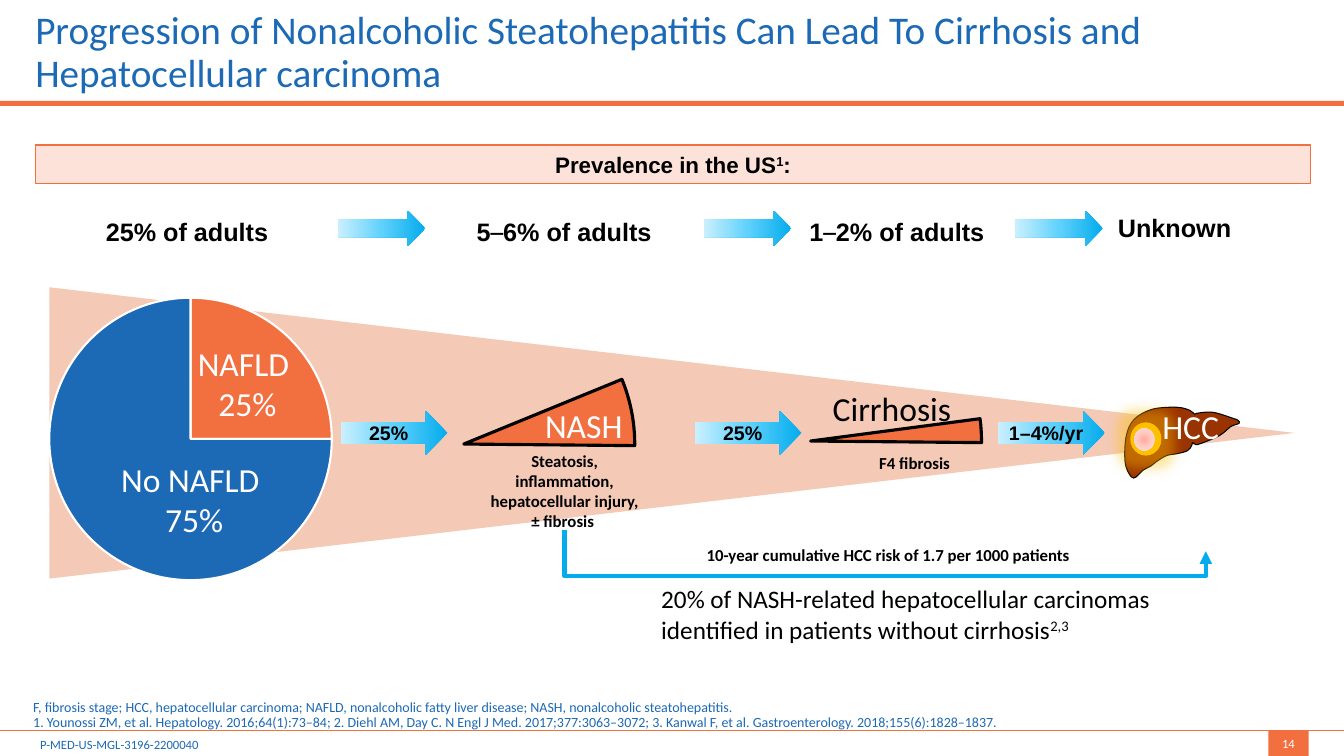
import pptx
import pptx.chart.data
import pptx.dml.color
import pptx.enum.chart
import pptx.enum.shapes
import pptx.enum.text
import pptx.oxml
import pptx.oxml.ns
import pptx.util

RGB = pptx.dml.color.RGBColor
SHAPE = pptx.enum.shapes.MSO_SHAPE
CONNECTOR = pptx.enum.shapes.MSO_CONNECTOR
ALIGN = pptx.enum.text.PP_ALIGN
ANCHOR = pptx.enum.text.MSO_ANCHOR

ORANGE = RGB(0xF2, 0x6F, 0x3F)
BLUE = RGB(0x1C, 0x69, 0xB5)
SKY = RGB(0x04, 0xAC, 0xED)
PEACH = RGB(0xFC, 0xE2, 0xD9)
SAND = RGB(0xEC, 0x9E, 0x79)
LIVER = RGB(0x99, 0x33, 0x00)
GOLD = RGB(0xFF, 0xC0, 0x00)
WHITE = RGB(0xFF, 0xFF, 0xFF)
BLACK = RGB(0, 0, 0)

ARROW_STOPS = ((0, "04ACED"), (50, "60D1FC"), (100, "CAF0FE"))
TUMOUR_STOPS = ((0, "FFAC9C"), (50, "FFCBC2"), (100, "FFE5E1"))
ARROW_SHADE = '<a:lin ang="10800000" scaled="0"/>'
TUMOUR_SHADE = '<a:path path="circle"><a:fillToRect l="50000" t="50000" r="50000" b="50000"/></a:path>'

LIVER_OUTLINE = (
    (6, 69), (0, 55), (1, 29), (9, 12), (27, 2), (51, 0), (64, 3), (69, 7), (71, 6),
    (87, 5), (107, 11), (112, 13), (113, 16), (105, 19), (98, 25), (90, 30), (75, 36),
    (70, 37), (67, 35), (66, 38), (62, 43), (52, 46), (41, 48), (31, 54), (26, 58),
    (17, 63), (11, 69),
)


def px(length):
    return pptx.util.Emu(round(length * 9144))


def qn(tag):
    return pptx.oxml.ns.qn(tag)


def xml(text):
    tag, rest = text.split(" ", 1)
    return pptx.oxml.parse_xml(f"{tag} {pptx.oxml.ns.nsdecls('a', 'c')} {rest}")


def inside(box, dx, dy, width, height):
    return box[0] + dx, box[1] + dy, width, height


def shape(slide, kind, box, fill=None, line=None, weight=1):
    item = slide.shapes.add_shape(kind, *map(px, box))
    finish(item, fill, line, weight)
    return item


def finish(item, fill, line=None, weight=1):
    item.shadow.inherit = False
    if fill is not None:
        item.fill.solid()
        item.fill.fore_color.rgb = fill
    if line is None:
        item.line.fill.background()
    else:
        item.line.color.rgb = line
        item.line.width = pptx.util.Pt(weight)


def gradient(item, stops, shade):
    stop_list = "".join(
        f'<a:gs pos="{pos * 1000}"><a:srgbClr val="{color}"/></a:gs>' for pos, color in stops)
    fill = xml(f'<a:gradFill rotWithShape="1"><a:gsLst>{stop_list}</a:gsLst>{shade}</a:gradFill>')
    item._element.spPr.find(qn("a:prstGeom")).addnext(fill)


def superscript(run):
    run.font._element.set("baseline", "30000")


def calibri(run):
    run.font.name = "Calibri"


def write(item, pieces, size, color=BLACK, font="Calibri", bold=False, align=ALIGN.CENTER,
          anchor=ANCHOR.TOP, wrap=True, insets=(10, 5), spacing=None, mark=None):
    frame = item.text_frame
    frame.auto_size = pptx.enum.text.MSO_AUTO_SIZE.NONE
    frame.word_wrap = wrap
    frame.vertical_anchor = anchor
    frame.margin_left = frame.margin_right = px(insets[0])
    frame.margin_top = frame.margin_bottom = px(insets[1])
    frame.text = pieces[0]
    for piece in pieces[1:]:
        frame.paragraphs[-1].add_run().text = piece
    for paragraph in frame.paragraphs:
        paragraph.alignment = align
        paragraph.line_spacing = spacing
        for index, run in enumerate(paragraph.runs):
            run.font.name, run.font.size, run.font.bold = font, pptx.util.Pt(size), bold
            run.font.color.rgb = color
            if mark and index % 2:
                mark(run)


def label(slide, box, pieces, size, **style):
    item = slide.shapes.add_textbox(*map(px, box))
    write(item, pieces, size, **style)
    return item


def arrow(slide, box, rate=None):
    item = shape(slide, SHAPE.RIGHT_ARROW, box)
    gradient(item, ARROW_STOPS, ARROW_SHADE)
    if rate:
        write(item, [rate], 14, font="Arial", bold=True, anchor=ANCHOR.MIDDLE,
              wrap=False, insets=(0, 0))


def header(slide, box):
    title = slide.shapes.title
    title.left, title.top, title.width, title.height = map(px, inside(box, 35, 0, 1187, 100))
    write(title, ["Progression of Nonalcoholic Steatohepatitis Can Lead To Cirrhosis and "
                  "Hepatocellular carcinoma"], 28, color=BLUE, align=ALIGN.LEFT,
          anchor=ANCHOR.BOTTOM, insets=(0, 5), spacing=0.9)
    shape(slide, SHAPE.RECTANGLE, inside(box, 0, 100, box[2], 5), ORANGE)


def prevalence(slide, box):
    banner = shape(slide, SHAPE.RECTANGLE, inside(box, 0, 0, box[2], 38), PEACH, ORANGE)
    write(banner, ["Prevalence in the US", "1", ":"], 16, font="Arial", bold=True,
          anchor=ANCHOR.MIDDLE, mark=superscript)
    for dx, dy, width, share in (
            (-2, 66, 305, ["25% of adults"]), (382, 66, 285, ["5", "─", "6% of adults"]),
            (746, 66, 217, ["1", "─", "2% of adults"]), (1058, 62, 144, ["Unknown"])):
        label(slide, inside(box, dx, dy, width, 40), share, 18, font="Arial", bold=True,
              anchor=ANCHOR.MIDDLE, mark=calibri)
    for dx in (300, 663, 972):
        arrow(slide, inside(box, dx, 65, 87, 35))


def funnel(slide, box):
    left, top, width, height = box
    cone = shape(slide, SHAPE.ISOSCELES_TRIANGLE,
                 (left + (width - height) / 2, top + (height - width) / 2, height, width), SAND)
    cone.rotation = 90
    cone.fill._xPr.find(".//" + qn("a:srgbClr")).append(xml('<a:alpha val="54000"/>'))


def adults_pie(slide, box):
    data = pptx.chart.data.CategoryChartData()
    data.categories = ["1", "2"]
    data.add_series("Series 1", (25, 75))
    chart = slide.shapes.add_chart(pptx.enum.chart.XL_CHART_TYPE.PIE, *map(px, box), data).chart
    chart.has_legend = chart.has_title = False
    chart.font.name, chart.font.size = "Calibri", pptx.util.Pt(10)
    chart.font.color.rgb = BLACK
    plot = chart.plots[0]
    plot.vary_by_categories = False
    for index, color in enumerate((ORANGE, BLUE)):
        sector = plot.series[0].points[index].format
        sector.fill.solid()
        sector.fill.fore_color.rgb = color
        sector.line.color.rgb = WHITE
        sector.line.width = pptx.util.Pt(1.5)
    area = chart._chartSpace.chart.plotArea
    for old in area.findall(qn("c:layout")):
        area.remove(old)
    area.insert(0, xml(
        '<c:layout ><c:manualLayout><c:layoutTarget val="inner"/><c:xMode val="edge"/>'
        '<c:yMode val="edge"/><c:x val="0.09"/><c:y val="0.05"/><c:w val="0.82"/>'
        '<c:h val="0.91"/></c:manualLayout></c:layout>'))
    for dx, dy, text in ((187, 55, "NAFLD\n 25%"), (138, 170, "No NAFLD \n75%")):
        label(slide, inside(box, dx, dy, 75, 85), [text], 24, color=WHITE, wrap=False)


def wedge(slide, box, start):
    item = shape(slide, SHAPE.PIE, box, ORANGE, BLACK, 2.25)
    item.adjustments[0], item.adjustments[1] = start, 54.321
    item.rotation = 270


def nash(slide, box):
    wedge(slide, box, 40.636)
    label(slide, inside(box, 238, 126, 100, 38), ["NASH"], 24, color=WHITE, wrap=False)
    label(slide, inside(box, 180, 171, 178, 84),
          ["Steatosis, inflammation, hepatocellular injury, ± fibrosis "], 12, bold=True)


def cirrhosis(slide, box):
    wedge(slide, box, 49.493)
    label(slide, inside(box, 185, 176, 178, 84), ["F4 fibrosis "], 12, bold=True, wrap=False)
    label(slide, inside(box, 181, 112, 118, 44), ["Cirrhosis"], 24, align=ALIGN.LEFT, wrap=False)


def curve(outline, points):
    count = len(points)
    for i, segment in enumerate(list(outline._element.iter(qn("a:lnTo")))):
        before, start, end, after = (points[(i + k) % count] for k in (-1, 0, 1, 2))
        leave = [s + (e - b) / 6 for b, s, e in zip(before, start, end)]
        arrive = [e - (a - s) / 6 for s, e, a in zip(start, end, after)]
        stops = "".join(f'<a:pt x="{px(x)}" y="{px(y)}"/>' for x, y in (leave, arrive, end))
        segment.getparent().replace(segment, xml(f"<a:cubicBezTo >{stops}</a:cubicBezTo>"))


def hcc(slide, box):
    corners = [(px(box[0] + x), px(box[1] + y)) for x, y in LIVER_OUTLINE]
    builder = slide.shapes.build_freeform(*corners[0])
    builder.add_line_segments(corners[1:] + corners[:1], close=True)
    liver = builder.convert_to_shape()
    curve(liver, LIVER_OUTLINE)
    finish(liver, LIVER, BLACK, 0.75)
    halo = shape(slide, SHAPE.OVAL, inside(box, 5, 15, 31, 33), GOLD)
    halo._element.spPr.find(qn("a:effectLst")).append(xml(
        '<a:glow rad="228600"><a:srgbClr val="FFC000"><a:alpha val="40000"/></a:srgbClr></a:glow>'))
    gradient(shape(slide, SHAPE.OVAL, inside(box, 9, 21, 20, 22)), TUMOUR_STOPS, TUMOUR_SHADE)
    label(slide, inside(box, 27, -6, 106, 43), ["HCC"], 24, color=WHITE,
          align=ALIGN.LEFT, wrap=False)


def direct_risk(slide, box):
    left, top, width, rise = box
    x, y = left + width / 2, top + rise / 2
    bypass = slide.shapes.add_connector(
        CONNECTOR.ELBOW, px(x + rise / 2), px(y - width / 2), px(x - rise / 2), px(y + width / 2))
    bypass.line.color.rgb = SKY
    bypass.line.width = pptx.util.Pt(3)
    properties = bypass._element.spPr
    properties.find(qn("a:xfrm")).set("rot", "16200000")
    guides = properties.find(qn("a:prstGeom")).get_or_add_avLst()
    guides.append(xml('<a:gd name="adj1" fmla="val 218000"/>'))
    properties.find(qn("a:ln")).append(xml('<a:tailEnd type="triangle"/>'))
    properties.append(xml("<a:effectLst />"))
    label(slide, inside(box, 42, 4, 558, 40),
          ["10-year cumulative HCC risk of 1.7 per 1000 patients"], 12, bold=True,
          anchor=ANCHOR.MIDDLE)
    label(slide, inside(box, 86, 48, 525, 71),
          ["20% of NASH-related hepatocellular carcinomas identified in patients without cirrhosis",
           "2,3"], 18, align=ALIGN.LEFT, mark=superscript)


def footer(slide, box):
    notes = label(slide, inside(box, 33, 0, 1113, 30), [
        "F, fibrosis stage; HCC, hepatocellular carcinoma; NAFLD, nonalcoholic fatty liver disease; "
        "NASH, nonalcoholic steatohepatitis.",
        "\n1. Younossi ZM, et al. Hepatology. 2016;64(1):73–84; 2. Diehl AM, Day C. N Engl J Med. "
        "2017;377:3063–3072; 3. Kanwal F, et al. Gastroenterology. 2018;155(6):1828–1837."],
        10, color=BLUE, align=ALIGN.LEFT, anchor=ANCHOR.BOTTOM, insets=(0, 0), spacing=0.9)
    references = notes.text_frame.paragraphs[0].runs[1]
    references.text = references.text.strip()
    references._r.addprevious(xml('<a:br ><a:rPr sz="1000"/></a:br>'))
    x, y = box[0], box[1] + 30
    rule = slide.shapes.add_connector(CONNECTOR.STRAIGHT, px(x), px(y), px(x + box[2]), px(y))
    rule.line.color.rgb = ORANGE
    rule.line.width = pptx.util.Pt(1)
    rule._element.spPr.append(xml("<a:effectLst />"))
    label(slide, inside(box, 30, 31, 178, 25), ["P-MED-US-MGL-3196-2200040"], 9,
          color=BLUE, align=ALIGN.LEFT, wrap=False)
    number = shape(slide, SHAPE.RECTANGLE, inside(box, 1258, 30, 40, 25), ORANGE)
    write(number, ["14"], 9, color=WHITE, anchor=ANCHOR.MIDDLE)


def main():
    deck = pptx.Presentation()
    deck.slide_width, deck.slide_height = px(1333), px(750)
    slide = deck.slides.add_slide(deck.slide_layouts[5])
    header(slide, (0, 0, 1333, 105))
    funnel(slide, (49, 285, 1235, 289))
    adults_pie(slide.shapes.add_group_shape(), (17, 280, 344, 308))
    nash(slide.shapes.add_group_shape(), (291, 271, 338, 339))
    prevalence(slide, (35, 144, 1265, 104))
    for left, rate in ((338, "25%"), (689, "25%"), (990, "1–4%/yr")):
        arrow(slide, (left, 408, 106, 43), rate)
    hcc(slide.shapes.add_group_shape(), (1116, 404, 114, 71))
    cirrhosis(slide.shapes.add_group_shape(), (635, 268, 338, 339))
    direct_risk(slide, (560, 526, 636, 21))
    footer(slide, (0, 695, 1333, 55))
    deck.save("out.pptx")


if __name__ == "__main__":
    main()
